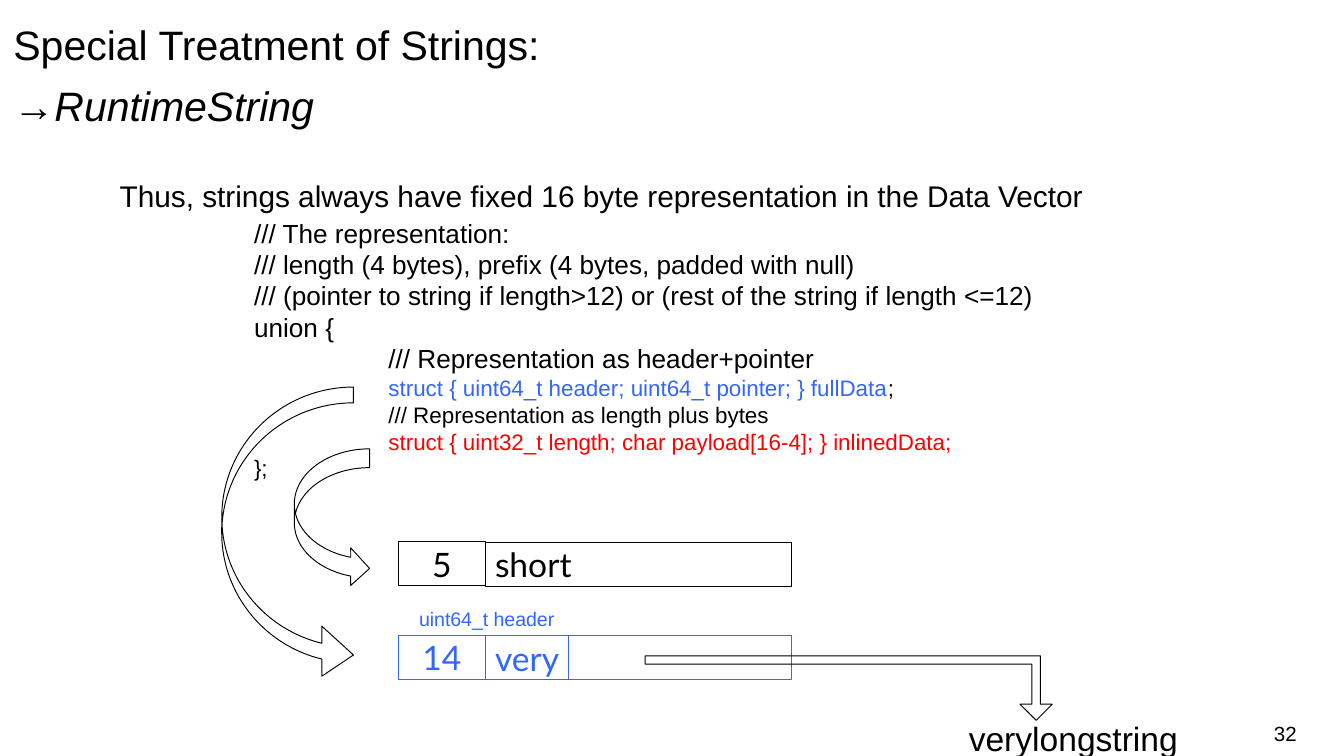
import pptx
import pptx.dml.color
import pptx.enum.shapes
import pptx.enum.text
import pptx.oxml.ns
import pptx.util
from lxml import etree

# The slide is a grid of square cells: 100 columns by 56.25 rows (16:9)
CELL = 0.1
COLUMNS, ROWS = 100, 56.25
BLACK, BLUE, RED = "000000", "3366FF", "FF0000"
SHAPES = pptx.enum.shapes.MSO_SHAPE
ANCHOR = pptx.enum.text.MSO_ANCHOR
ALIGN = pptx.enum.text.PP_ALIGN

# Code lines: indent level, size, and runs of text with colour
CODE = [
    (1, 14, [("/// The representation:", BLACK)]),
    (1, 14, [("/// length (4 bytes), prefix (4 bytes, padded with null)", BLACK)]),
    (1, 14, [("/// (pointer to string if length>12) or "
              "(rest of the string if length <=12)", BLACK)]),
    (1, 14, [("union {", BLACK)]),
    (2, 14, [("/// Representation as header+pointer", BLACK)]),
    (2, 12, [("struct { uint64_t header; uint64_t pointer; } fullData", BLUE),
             (";", BLACK)]),
    (2, 12, [("/// Representation as length plus bytes", BLACK)]),
    (2, 12, [("struct { uint32_t length; char payload[16-4]; } inlinedData;", RED)]),
    (1, 12, [("};", BLACK)]),
]


def cells(count):
    return pptx.util.Inches(count * CELL)


def color(hex_string):
    return pptx.dml.color.RGBColor.from_string(hex_string)


def apply(target, formats):
    for name, value in formats.items():
        setattr(target, name, value)


def place(item, left, top, width, height):
    apply(item, {"left": cells(left), "top": cells(top),
                 "width": cells(width), "height": cells(height)})


def add_run(paragraph, text, size, hex_string=BLACK, font="Arial", italic=False):
    run = paragraph.add_run()
    run.text = text
    apply(run.font, {"name": font, "size": pptx.util.Pt(size), "italic": italic})
    run.font.color.rgb = color(hex_string)


def format_frame(frame, anchor=ANCHOR.TOP, wrap=True, side=1, edge=0.5):
    apply(frame, {"auto_size": pptx.enum.text.MSO_AUTO_SIZE.NONE,
                  "word_wrap": wrap, "vertical_anchor": anchor,
                  "margin_left": cells(side), "margin_right": cells(side),
                  "margin_top": cells(edge), "margin_bottom": cells(edge)})


def fill_title(title):
    place(title, 0, 0, COLUMNS, 9.4)
    format_frame(title.text_frame)
    heading = title.text_frame.paragraphs[0]
    apply(heading, {"alignment": ALIGN.LEFT, "line_spacing": 1.25})
    add_run(heading, "Special Treatment of Strings:", 22)
    heading.add_line_break()
    add_run(heading, "→", 22)
    add_run(heading, "RuntimeString", 22, italic=True)


def add_line(paragraph, level, size, runs, before=0):
    properties = paragraph._p.get_or_add_pPr()
    properties.set("marL", str(pptx.util.Inches(level)))
    properties.set("indent", "0")
    etree.SubElement(properties, pptx.oxml.ns.qn("a:buNone"))
    apply(paragraph, {"line_spacing": 1.0, "space_before": pptx.util.Pt(before)})
    for text, hex_string in runs:
        add_run(paragraph, text, size, hex_string)


def fill_body(body):
    place(body, 7.9, 12.7, 92, 28.3)
    format_frame(body.text_frame)
    statement = ("Thus, strings always have fixed 16 byte representation "
                 "in the Data Vector")
    add_line(body.text_frame.paragraphs[0], 0, 16, [(statement, BLACK)])
    for index, (level, size, runs) in enumerate(CODE):
        add_line(body.text_frame.add_paragraph(), level, size, runs,
                 before=2 if index == 0 else 0)


def add_outline(slide, kind, box, hex_string=BLACK, adjustments=()):
    shape = slide.shapes.add_shape(kind, *map(cells, box))
    shape.shadow.inherit = False
    shape.fill.background()
    shape.line.color.rgb = color(hex_string)
    shape.line.width = pptx.util.Pt(0.5)
    for index, value in enumerate(adjustments):
        shape.adjustments[index] = value
    return shape


def add_field(slide, box, text, hex_string, align=ALIGN.LEFT):
    field = add_outline(slide, SHAPES.RECTANGLE, box, hex_string)
    if text:
        format_frame(field.text_frame, ANCHOR.MIDDLE, wrap=False, side=0.7, edge=0.4)
        paragraph = field.text_frame.paragraphs[0]
        paragraph.alignment = align
        add_run(paragraph, text, 18, hex_string, "Lato")


def add_record(slide, top, length, fields, hex_string):
    left, width, height = 29.63, 6.5, 3.3
    add_field(slide, (left, top, width, height), length, hex_string, ALIGN.CENTER)
    left += width
    for text, width in fields:
        add_field(slide, (left, top + 0.05, width, height), text, hex_string)
        left += width


def add_label(slide, box, text, size, hex_string=BLACK, align=ALIGN.LEFT, **frame):
    label = slide.shapes.add_textbox(*map(cells, box))
    format_frame(label.text_frame, **frame)
    paragraph = label.text_frame.paragraphs[0]
    paragraph.alignment = align
    add_run(paragraph, text, size, hex_string)


def main():
    deck = pptx.Presentation()
    deck.slide_width, deck.slide_height = cells(COLUMNS), cells(ROWS)
    slide = deck.slides.add_slide(deck.slide_layouts[1])
    fill_title(slide.shapes.title)
    fill_body(slide.placeholders[1])

    # Memory layout of a short and a long string
    add_record(slide, 40.3, "5", [("short", 22.8)], BLACK)
    add_record(slide, 47.25, "14", [("very", 6.2), ("", 16.6)], BLUE)
    add_label(slide, (71.1, 52.9, 21.2, 4), "verylongstring", 18)

    # Pointer to the long string, turned to point down
    pointer = add_outline(slide, SHAPES.BENT_UP_ARROW, (48, 48.8, 30.3, 4.8),
                          adjustments=(0.13, 0.25, 0.25))
    pointer.element.spPr.find(pptx.oxml.ns.qn("a:xfrm")).set("flipV", "1")

    # Arrows from each struct to its record
    add_outline(slide, SHAPES.CURVED_RIGHT_ARROW, (21.9, 33.4, 5.6, 10.3))
    add_outline(slide, SHAPES.CURVED_RIGHT_ARROW, (16.5, 28.8, 9.8, 21.8),
                adjustments=(0.12, 0.38, 0.24))

    # Header label and slide number
    add_label(slide, (30.2, 44.7, 12.3, 2.8), "uint64_t header", 10.5, BLUE, wrap=False)
    add_label(slide, (74.1, 53.1, 22.4, 3), "32", 11, align=ALIGN.RIGHT,
              anchor=ANCHOR.MIDDLE, side=0)
    deck.save("out.pptx")


if __name__ == "__main__":
    main()
